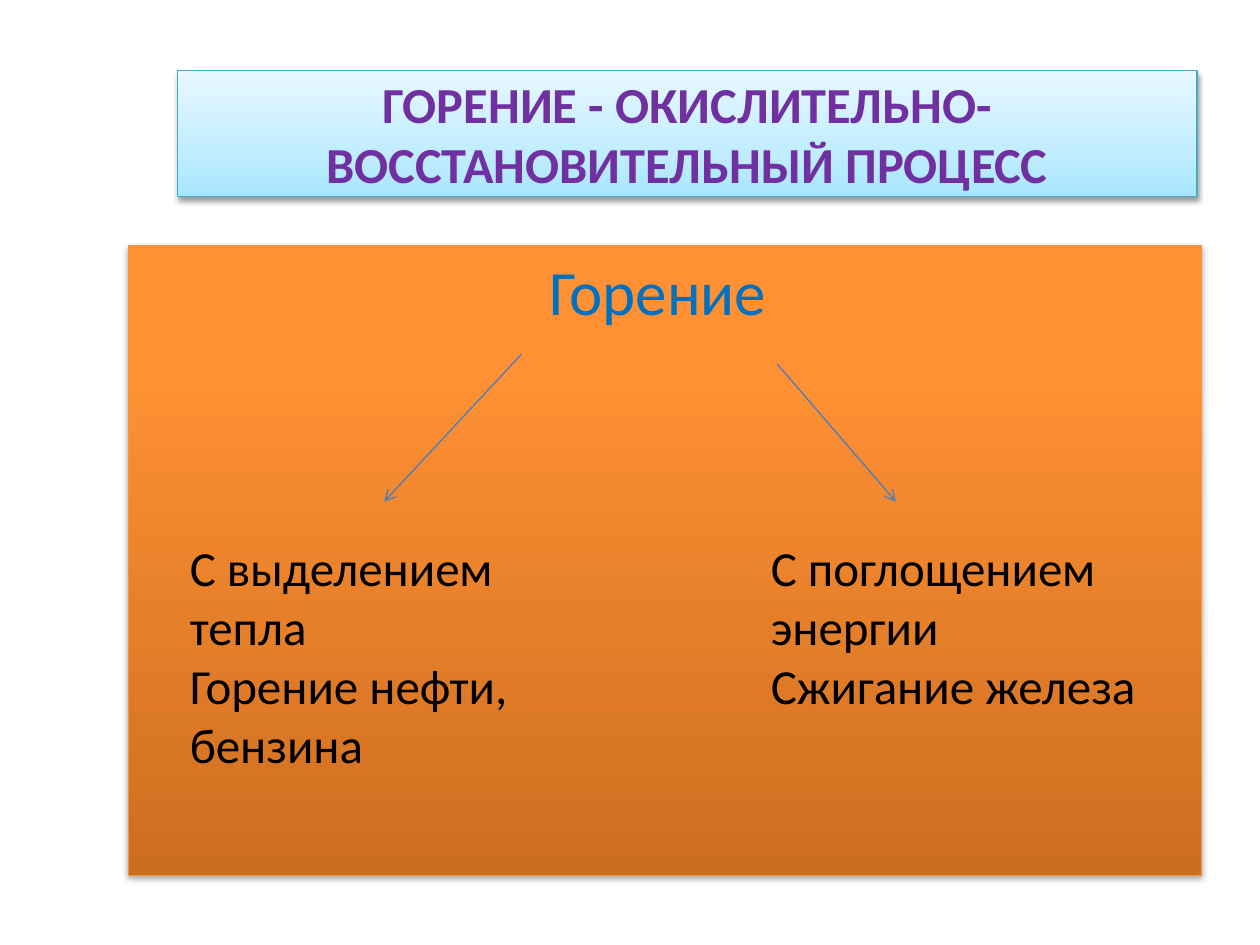
from lxml import etree
from pptx import Presentation
from pptx.dml.color import RGBColor
from pptx.enum import shapes, text
from pptx.oxml.ns import nsdecls, qn
from pptx.util import Pt

PURPLE = RGBColor(0x70, 0x30, 0xA0)
BLUE = RGBColor(0x00, 0x70, 0xC0)
BLACK = RGBColor(0, 0, 0)
TEAL = RGBColor(0x46, 0xAA, 0xC5)
ORANGE = RGBColor(0xF6, 0x92, 0x40)
STEEL = RGBColor(0x4B, 0x7E, 0xBC)
SKY = [(0, RGBColor(0xA7, 0xE6, 0xFF)), (35, RGBColor(0xC1, 0xED, 0xFF)),
       (100, RGBColor(0xE7, 0xF8, 0xFF))]
FLAME = [(0, RGBColor(0xCC, 0x6E, 0x20)), (80, RGBColor(0xFF, 0x90, 0x34)),
         (100, RGBColor(0xFF, 0x91, 0x36))]


def node(xml):
    return etree.fromstring(xml.replace(">", f" {nsdecls('a')}>", 1)
                            if "/>" not in xml.split(">", 1)[0] + ">"
                            else xml.replace("/>", f" {nsdecls('a')}/>", 1))


def place(item, box):
    for key, val in zip(("left", "top", "width", "height"), box):
        setattr(item, key, Pt(val))


def style(item, **form):
    for key, val in form.items():
        setattr(item, key, val)


def write(par, words, size, color, bold=False):
    run = par.add_run()
    run.text = words
    style(run.font, name="Calibri", size=Pt(size), bold=bold)
    run.font.color.rgb = color


def edge(item, color):
    item.line.color.rgb = color
    item.line.width = Pt(0.75)
    return item._element.spPr.find(qn("a:ln"))


def panel(item, box, stops, color, alpha, dist):
    place(item, box)
    line = edge(item, color)
    marks = "".join(f'<a:gs pos="{pos * 1000}"><a:srgbClr val="{tone}"/></a:gs>'
                    for pos, tone in stops)
    line.addprevious(node(f'<a:gradFill rotWithShape="1"><a:gsLst>{marks}</a:gsLst>'
                          '<a:lin ang="16200000" scaled="0"/></a:gradFill>'))
    line.addnext(node(
        f'<a:effectLst><a:outerShdw blurRad="{Pt(3.1)}" dist="{Pt(dist)}" '
        'dir="5400000" rotWithShape="0"><a:srgbClr val="000000">'
        f'<a:alpha val="{alpha * 1000}"/></a:srgbClr></a:outerShdw></a:effectLst>'))
    item.text_frame.auto_size = text.MSO_AUTO_SIZE.NONE
    par = item.text_frame.paragraphs[0]
    par.alignment = text.PP_ALIGN.CENTER
    return par


def arrow(slide, start, end):
    line = slide.shapes.add_connector(shapes.MSO_CONNECTOR.STRAIGHT,
                                      *map(Pt, start + end))
    edge(line, STEEL).append(node('<a:tailEnd type="arrow"/>'))
    line._element.spPr.append(node("<a:effectLst/>"))


def note(slide, box, lines):
    frame = slide.shapes.add_textbox(*map(Pt, box)).text_frame
    style(frame, word_wrap=True, auto_size=text.MSO_AUTO_SIZE.SHAPE_TO_FIT_TEXT)
    for num, words in enumerate(lines):
        par = frame.add_paragraph() if num else frame.paragraphs[0]
        write(par, words, 28, BLACK)


def heading(slide, box):
    par = panel(slide.shapes.title, box, SKY, TEAL, 38, 1.6)
    slide.shapes.title.text_frame.vertical_anchor = text.MSO_ANCHOR.MIDDLE
    write(par, "ГОРЕНИЕ - ОКИСЛИТЕЛЬНО- ВОССТАНОВИТЕЛЬНЫЙ ПРОЦЕСС", 28.8, PURPLE, True)


def scheme(slide, box):
    left, top = box[:2]
    par = panel(slide.placeholders[1], box, FLAME, ORANGE, 35, 1.8)
    prop = par._p.get_or_add_pPr()
    style(par, space_before=Pt(7))
    prop.set("marL", str(Pt(27)))
    prop.set("indent", str(Pt(-27)))
    prop.append(node("<a:buNone/>"))
    write(par, "Горение ", 36, BLUE)
    for start, end in (((224.6, 62), (146.2, 146.2)), ((370.8, 67.7), (438.5, 146.2))):
        arrow(slide, (left + start[0], top + start[1]), (left + end[0], top + end[1]))
    for shift, width, lines in (
            (28, 230.4, ("С выделением тепла", "Горение нефти, бензина")),
            (360, 224.6, ("С поглощением энергии", "Сжигание железа"))):
        note(slide, (left + shift, top + 163.4, width, 143.3), lines)


def main():
    deck = Presentation()
    style(deck, slide_width=Pt(720), slide_height=Pt(540))
    slide = deck.slides.add_slide(deck.slide_layouts[1])
    heading(slide, (101.5, 40.3, 582.5, 72))
    scheme(slide, (73.4, 140.4, 613.4, 360))
    deck.save("out.pptx")


if __name__ == "__main__":
    main()
